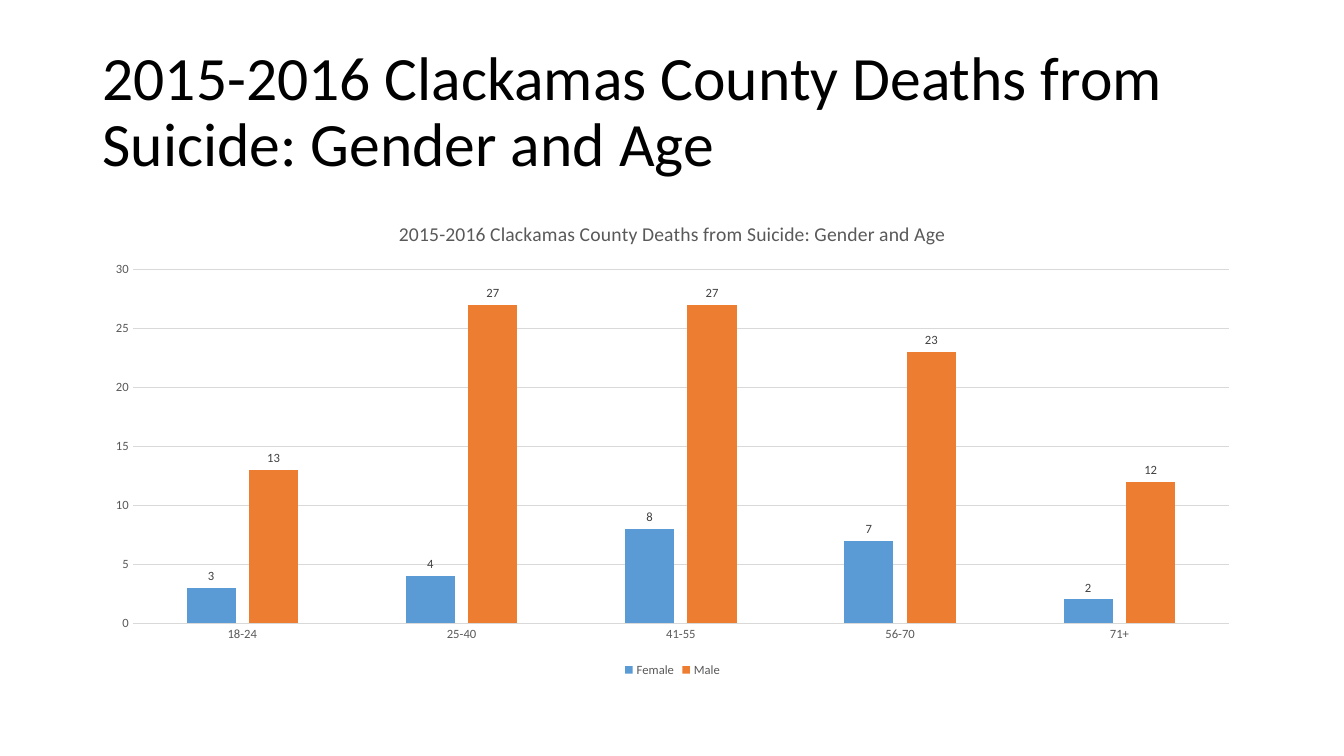
import pptx
import pptx.util
import pptx.chart.data
import pptx.dml.color
import pptx.enum.chart
import pptx.enum.text

Inches, Pt = pptx.util.Inches, pptx.util.Pt
COLORS = {
    "title": "000000", "text": "595959", "label": "404040",
    "grid": "D9D9D9", "Female": "5B9BD5", "Male": "ED7D31",
}
FACE = "Calibri"
TITLE = "2015-2016 Clackamas County Deaths from Suicide: Gender and Age"
AGES = ["18-24", "25-40", "41-55", "56-70", "71+"]
DEATHS = {"Female": [3, 4, 8, 7, 2], "Male": [13, 27, 27, 23, 12]}


def color(name):
    return pptx.dml.color.RGBColor.from_string(COLORS[name])


def style(font, size, name):
    font.name, font.size, font.bold = FACE, Pt(size), False
    font.color.rgb = color(name)


def rule(line):
    line.color.rgb = color("grid")
    line.width = Pt(0.75)


def add_title(slide, box):
    frame = slide.shapes.add_textbox(*box).text_frame
    frame.word_wrap = True
    frame.vertical_anchor = pptx.enum.text.MSO_ANCHOR.MIDDLE
    para = frame.paragraphs[0]
    para.text = TITLE
    para.line_spacing = 0.9
    style(para.font, 44, "title")


def style_axes(chart):
    none = pptx.enum.chart.XL_TICK_MARK.NONE
    for axis in (chart.category_axis, chart.value_axis):
        axis.major_tick_mark = axis.minor_tick_mark = none
        style(axis.tick_labels.font, 9, "text")
    rule(chart.category_axis.format.line)
    axis = chart.value_axis
    axis.minimum_scale, axis.maximum_scale, axis.major_unit = 0, 30, 5
    axis.format.line.fill.background()
    rule(axis.major_gridlines.format.line)


def style_bars(plot):
    plot.gap_width, plot.overlap = 219, -27
    plot.vary_by_categories = False
    for bars in plot.series:
        bars.format.fill.solid()
        bars.format.fill.fore_color.rgb = color(bars.name)
        bars.invert_if_negative = False
        labels = bars.data_labels
        labels.show_value = True
        labels.position = pptx.enum.chart.XL_LABEL_POSITION.OUTSIDE_END
        style(labels.font, 9, "label")


def add_chart(slide, box):
    data = pptx.chart.data.CategoryChartData()
    data.categories = AGES
    for name, counts in DEATHS.items():
        data.add_series(name, counts)
    kind = pptx.enum.chart.XL_CHART_TYPE.COLUMN_CLUSTERED
    chart = slide.shapes.add_chart(kind, *box, data).chart
    style(chart.font, 10, "title")
    chart.has_title = True
    para = chart.chart_title.text_frame.paragraphs[0]
    para.text = TITLE
    style(para.font, 14, "text")
    chart.chart_title.include_in_layout = False
    chart.has_legend = True
    chart.legend.position = pptx.enum.chart.XL_LEGEND_POSITION.BOTTOM
    chart.legend.include_in_layout = False
    style(chart.legend.font, 9, "text")
    style_axes(chart)
    style_bars(chart.plots[0])


def main():
    deck = pptx.Presentation()
    deck.slide_width, deck.slide_height = Inches(13.33), Inches(7.5)
    slide = deck.slides.add_slide(deck.slide_layouts[6])
    left, width = Inches(0.92), Inches(11.5)
    add_title(slide, (left, Inches(0.4), width, Inches(1.45)))
    add_chart(slide, (left, Inches(2), width, Inches(4.76)))
    deck.save("out.pptx")


if __name__ == "__main__":
    main()
